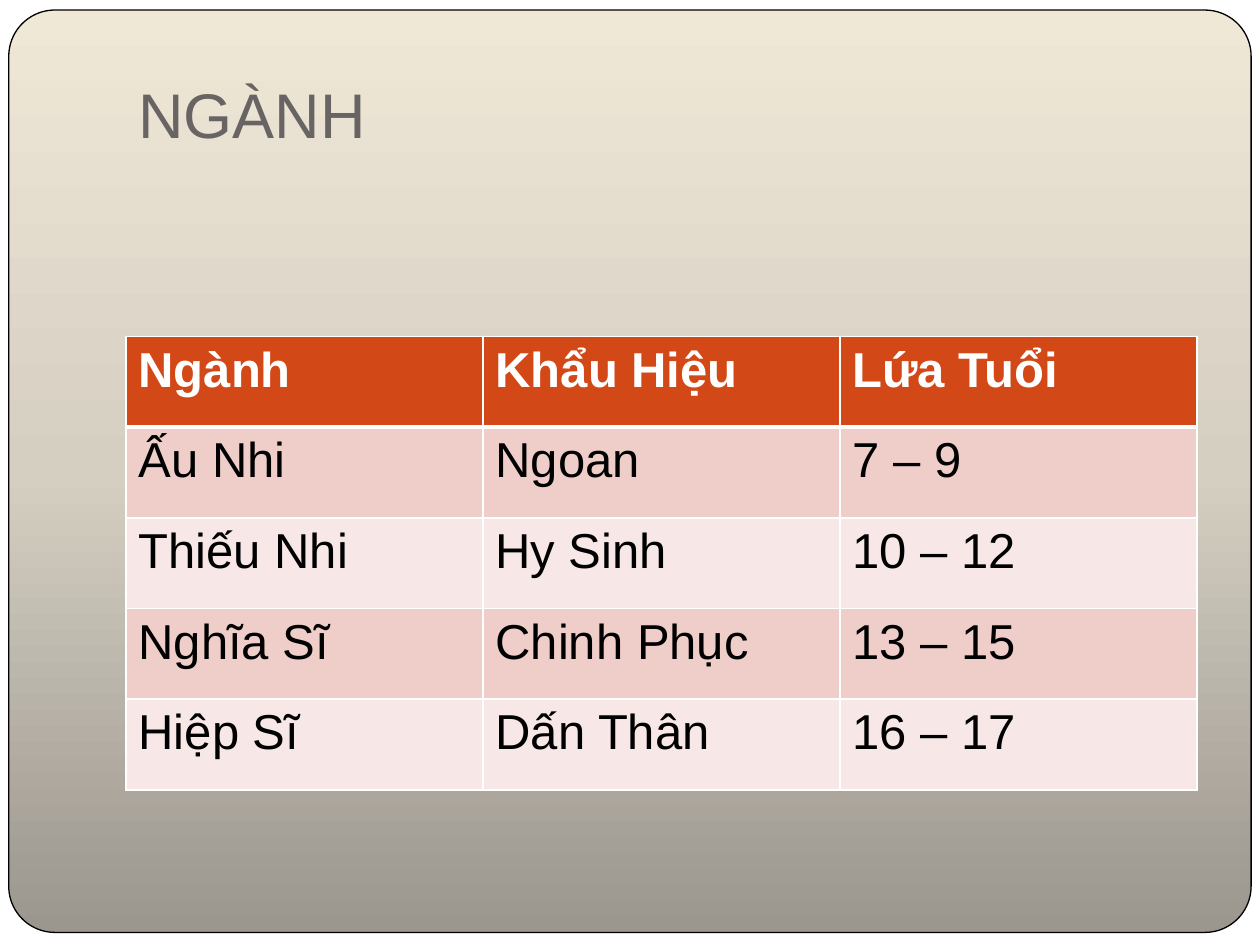
from copy import deepcopy

from lxml.etree import SubElement
from pptx import Presentation
from pptx.dml.color import RGBColor
from pptx.enum.shapes import MSO_SHAPE as Shape
from pptx.enum.text import MSO_ANCHOR as Anchor
from pptx.oxml.ns import qn
from pptx.util import Inches, Pt

WHITE = RGBColor(0xFF, 0xFF, 0xFF)
BLACK = RGBColor(0x00, 0x00, 0x00)
TITLE_GREY = RGBColor(0x69, 0x64, 0x64)
HEADER_RED = RGBColor(0xD3, 0x48, 0x17)
BANDS = [RGBColor(0xF7, 0xE8, 0xE7), RGBColor(0xEF, 0xCE, 0xCA)]
PANEL_STOPS = [
    (0, RGBColor(0x9B, 0x96, 0x8E)),
    (0.5, RGBColor(0xD5, 0xCF, 0xC2)),
    (1, RGBColor(0xF0, 0xE8, 0xD7)),
]
FONT = "Arial"
ROWS = [
    ("Ngành", "Khẩu Hiệu", "Lứa Tuổi"),
    ("Ấu Nhi", "Ngoan", "7 – 9"),
    ("Thiếu Nhi", "Hy Sinh", "10 – 12"),
    ("Nghĩa Sĩ", "Chinh Phục", "13 – 15"),
    ("Hiệp Sĩ", "Dấn Thân", "16 – 17"),
]
LEFT, WIDTH = Inches(1), Inches(8.5)
ROW_HEIGHT = Inches(0.72)


def add_border(cell, side, points):
    line = SubElement(cell._tc.get_or_add_tcPr(), qn(f"a:ln{side}"), w=str(Pt(points)))
    SubElement(SubElement(line, qn("a:solidFill")), qn("a:srgbClr"), val=str(WHITE))


deck = Presentation()
deck.slide_width, deck.slide_height = Inches(10), Inches(7.5)
page = deck.slides.add_slide(deck.slide_layouts[6])
page.background.fill.solid()
page.background.fill.fore_color.rgb = WHITE

# Rounded panel, shaded from dark at the bottom to light at the top
panel = page.shapes.add_shape(
    Shape.ROUNDED_RECTANGLE, Inches(0.07), Inches(0.08), Inches(9.86), Inches(7.32))
panel.adjustments[0] = 0.05
panel.shadow.inherit = False
panel.line.color.rgb = BLACK
panel.line.width = Pt(0.75)
panel.fill.gradient()
panel.fill.gradient_angle = 90
stop_list = panel._element.spPr.find(f".//{qn('a:gsLst')}")
stop_list.append(deepcopy(stop_list[0]))
for stop, (position, color) in zip(panel.fill.gradient_stops, PANEL_STOPS):
    stop.position = position
    stop.color.rgb = color

# Title
title = page.shapes.add_textbox(LEFT, Inches(0.33), WIDTH, Inches(0.97))
frame = title.text_frame
frame.word_wrap = True
frame.vertical_anchor = Anchor.BOTTOM
frame.margin_bottom = Inches(0.1)
para = frame.paragraphs[0]
para.text = "NGÀNH"
para.font.name, para.font.size = FONT, Pt(36)
para.font.color.rgb = TITLE_GREY

# Table with a header row and banded body rows
table = page.shapes.add_table(
    len(ROWS), len(ROWS[0]), LEFT, Inches(2.67), WIDTH, ROW_HEIGHT * len(ROWS)).table
for row, texts in enumerate(ROWS):
    header = row == 0
    for column, text in enumerate(texts):
        cell = table.cell(row, column)
        add_border(cell, "L", 1)
        add_border(cell, "R", 1)
        add_border(cell, "T", 3 if row == 1 else 1)
        add_border(cell, "B", 3 if header else 1)
        cell.fill.solid()
        cell.fill.fore_color.rgb = HEADER_RED if header else BANDS[row % 2]
        cell.text = text
        font = cell.text_frame.paragraphs[0].font
        font.name, font.size, font.bold = FONT, Pt(28), header
        font.color.rgb = WHITE if header else BLACK

deck.save("out.pptx")
